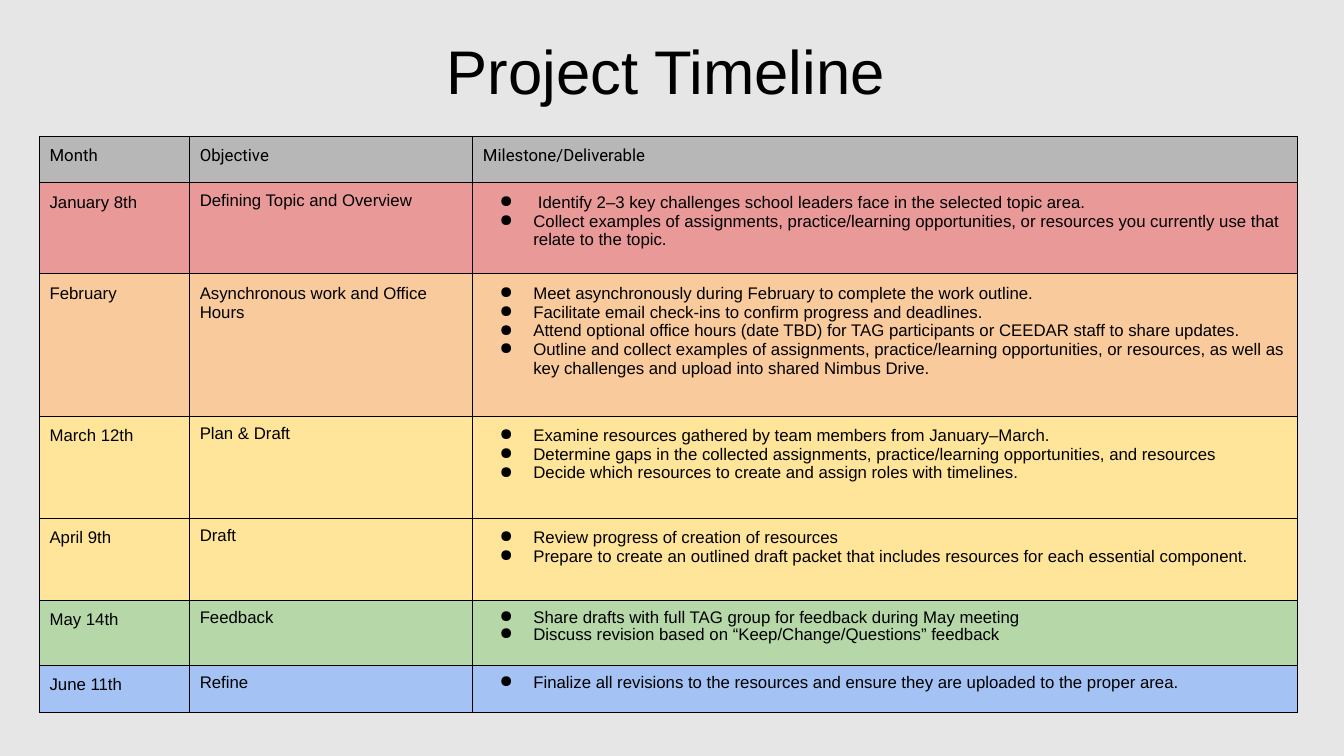
from dataclasses import dataclass

import lxml.etree
import pptx
import pptx.dml.color
import pptx.enum.text
import pptx.oxml.ns
import pptx.util

Pt = pptx.util.Pt
qn = pptx.oxml.ns.qn
INK = "000000"
PAD = Pt(7.2)
COLS = (107.3, 202.3, 589)


@dataclass
class Phase:
    month: str
    goal: str
    tasks: list[str]
    fill: str
    height: float
    goal_gap: float = 0.9
    task_gap: float = 1.0


HEADS = ("Month", "Objective", "Milestone/Deliverable")
HEAD_HIGH = 33.5
PHASES = [
    Phase("January 8th", "Defining Topic and Overview", [
        " Identify 2–3 key challenges school leaders face in the selected topic area.",
        "Collect examples of assignments, practice/learning opportunities, "
        "or resources you currently use that relate to the topic.",
    ], "EA9999", 65),
    Phase("February", "Asynchronous work and Office Hours", [
        "Meet asynchronously during February to complete the work outline.",
        "Facilitate email check-ins to confirm progress and deadlines.",
        "Attend optional office hours (date TBD) for TAG participants "
        "or CEEDAR staff to share updates.",
        "Outline and collect examples of assignments, practice/learning opportunities, "
        "or resources, as well as key challenges and upload into shared Nimbus Drive.",
    ], "F9CB9C", 101.5, goal_gap=1.0),
    Phase("March 12th", "Plan & Draft", [
        "Examine resources gathered by team members from January–March.",
        "Determine gaps in the collected assignments, "
        "practice/learning opportunities, and resources",
        "Decide which resources to create and assign roles with timelines.",
    ], "FFE599", 73),
    Phase("April 9th", "Draft", [
        "Review progress of creation of resources",
        "Prepare to create an outlined draft packet that includes resources "
        "for each essential component.",
    ], "FFE599", 58.5),
    Phase("May 14th", "Feedback", [
        "Share drafts with full TAG group for feedback during May meeting",
        "Discuss revision based on “Keep/Change/Questions” feedback",
    ], "B6D7A8", 46.5, task_gap=0.9),
    Phase("June 11th", "Refine", [
        "Finalize all revisions to the resources and ensure they are uploaded "
        "to the proper area.",
    ], "A4C2F4", 33.5, task_gap=0.9),
]


def paint(fill, color: str) -> None:
    fill.solid()
    fill.fore_color.rgb = pptx.dml.color.RGBColor.from_string(color)


def style(par, size: float, face: str, gap: float) -> None:
    par.line_spacing = gap
    par.font.size = Pt(size)
    par.font.name = face
    paint(par.font.fill, INK)


def add_bullet(par) -> None:
    props = par._p.get_or_add_pPr()
    props.set("marL", str(Pt(36)))
    props.set("indent", str(-Pt(24)))
    tint = lxml.etree.SubElement(props, qn("a:buClr"))
    lxml.etree.SubElement(tint, qn("a:srgbClr"), val=INK)
    lxml.etree.SubElement(props, qn("a:buChar"), char="●")


def add_edges(cell) -> None:
    props = cell._tc.get_or_add_tcPr()
    for side in ("lnL", "lnR", "lnT", "lnB"):
        line = lxml.etree.SubElement(props, qn(f"a:{side}"), w=str(Pt(0.75)))
        fill = lxml.etree.SubElement(line, qn("a:solidFill"))
        lxml.etree.SubElement(fill, qn("a:srgbClr"), val=INK)


def fill_cell(cell, lines: list[str], color: str, face: str = "Arial",
              gap: float = 1.0, bullets: bool = False) -> None:
    add_edges(cell)
    paint(cell.fill, color)
    cell.margin_left = cell.margin_right = PAD
    cell.margin_top = cell.margin_bottom = PAD
    frame = cell.text_frame
    frame.text = "\n".join(lines)
    for par in frame.paragraphs:
        if bullets:
            add_bullet(par)
        style(par, 12, face, gap)


def add_title(slide) -> None:
    box = slide.shapes.add_textbox(Pt(34), Pt(0.7), Pt(883.5), Pt(104.5))
    frame = box.text_frame
    frame.word_wrap = True
    frame.vertical_anchor = pptx.enum.text.MSO_ANCHOR.MIDDLE
    par = frame.paragraphs[0]
    par.text = "Project Timeline"
    par.alignment = pptx.enum.text.PP_ALIGN.CENTER
    style(par, 44, "Arial", 0.9)


def add_grid(slide) -> None:
    highs = [HEAD_HIGH] + [phase.height for phase in PHASES]
    grid = slide.shapes.add_table(
        len(highs), len(COLS), Pt(28.2), Pt(97.2), Pt(sum(COLS)), Pt(sum(highs))).table
    grid.first_row = grid.horz_banding = False
    for col, width in zip(grid.columns, COLS):
        col.width = Pt(width)
    for row, high in zip(grid.rows, highs):
        row.height = Pt(high)
    for cell, head in zip(grid.rows[0].cells, HEADS):
        fill_cell(cell, [head], "B7B7B7", face="Roboto")
    for num, phase in enumerate(PHASES, start=1):
        month, goal, tasks = grid.rows[num].cells
        fill_cell(month, [phase.month], phase.fill)
        fill_cell(goal, [phase.goal], phase.fill, gap=phase.goal_gap)
        fill_cell(tasks, phase.tasks, phase.fill, gap=phase.task_gap, bullets=True)


def main() -> None:
    deck = pptx.Presentation()
    deck.slide_width, deck.slide_height = Pt(960), Pt(540)
    slide = deck.slides.add_slide(deck.slide_layouts[6])
    paint(slide.background.fill, "E7E6E6")
    add_title(slide)
    add_grid(slide)
    deck.save("out.pptx")


if __name__ == "__main__":
    main()
